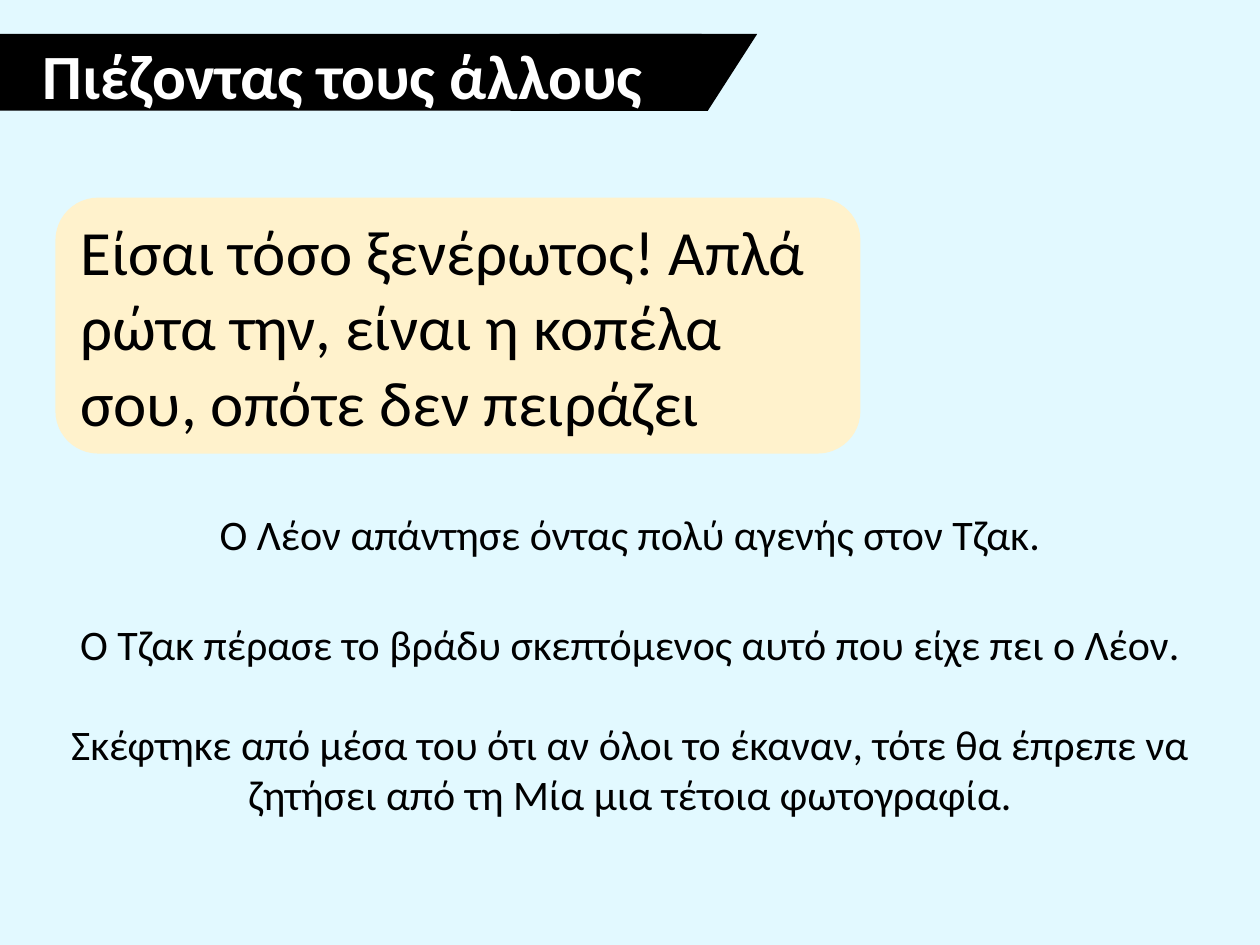
from pptx import Presentation
from pptx import util as u
from pptx.dml.color import RGBColor
from pptx.enum import shapes, text

PALE_BLUE = RGBColor(0xE2, 0xF9, 0xFF)
CREAM = RGBColor(0xFF, 0xF2, 0xCC)
BLACK = RGBColor(0, 0, 0)
WHITE = RGBColor(0xFF, 0xFF, 0xFF)

MARGIN = 31.7
STORY_WIDTH = 656.6


def box(left, top, width, height):
    return [u.Pt(length) for length in (left, top, width, height)]


def add_panel(parent, kind, place, color):
    panel = parent.shapes.add_shape(kind, *box(*place))
    panel.shadow.inherit = False
    panel.fill.solid()
    panel.fill.fore_color.rgb = color
    panel.line.fill.background()
    return panel


def write(holder, *paragraphs, size=24, color=BLACK, bold=False,
          align=text.PP_ALIGN.LEFT, anchor=text.MSO_ANCHOR.TOP,
          gap=0, spacing=None):
    frame = holder.text_frame
    frame.word_wrap = True
    frame.vertical_anchor = anchor
    for index, wording in enumerate(paragraphs):
        paragraph = frame.add_paragraph() if index else frame.paragraphs[0]
        if index:
            paragraph.space_before = u.Pt(gap)
        if spacing:
            paragraph.line_spacing = spacing
        paragraph.alignment = align
        run = paragraph.add_run()
        run.text = wording
        run.font.name = "Calibri"
        run.font.size = u.Pt(size)
        run.font.bold = bold
        run.font.color.rgb = color


def add_story(slide, top, height, *paragraphs):
    story = slide.shapes.add_textbox(*box(MARGIN, top, STORY_WIDTH, height))
    write(story, *paragraphs, align=text.PP_ALIGN.CENTER, gap=28)


def add_quote(slide, wording):
    quote = add_panel(slide, shapes.MSO_SHAPE.ROUNDED_RECTANGLE,
                      (MARGIN, 113, 460, 146.2), CREAM)
    write(quote, wording, size=36, anchor=text.MSO_ANCHOR.MIDDLE)


def add_banner(slide, wording):
    banner = slide.shapes.add_group_shape()
    add_panel(banner, shapes.MSO_SHAPE.FLOWCHART_DATA,
              (291.6, 19.4, 141.1, 43.9), BLACK)
    add_panel(banner, shapes.MSO_SHAPE.RECTANGLE,
              (0, 19.4, 401, 43.9), BLACK)
    title = banner.shapes.add_textbox(*box(17.3, 14.4, 401, 98.6))
    write(title, wording, size=36, color=WHITE, bold=True, spacing=1.07)


def main():
    deck = Presentation()
    deck.slide_width, deck.slide_height = u.Pt(720), u.Pt(540)
    slide = deck.slides.add_slide(deck.slide_layouts[6])
    slide.background.fill.solid()
    slide.background.fill.fore_color.rgb = PALE_BLUE

    add_story(slide, 287.3, 36, "Ο Λέον απάντησε όντας πολύ αγενής στον Τζακ.")
    add_quote(slide, "Είσαι τόσο ξενέρωτος! Απλά ρώτα την, είναι η κοπέλα "
                     "σου, οπότε δεν πειράζει")
    add_story(slide, 350, 123.8,
              "Ο Τζακ πέρασε το βράδυ σκεπτόμενος αυτό που είχε πει ο Λέον.",
              "Σκέφτηκε από μέσα του ότι αν όλοι το έκαναν, τότε θα έπρεπε "
              "να ζητήσει από τη Μία μια τέτοια φωτογραφία.")
    add_banner(slide, "Πιέζοντας τους άλλους")
    deck.save("out.pptx")


if __name__ == "__main__":
    main()
